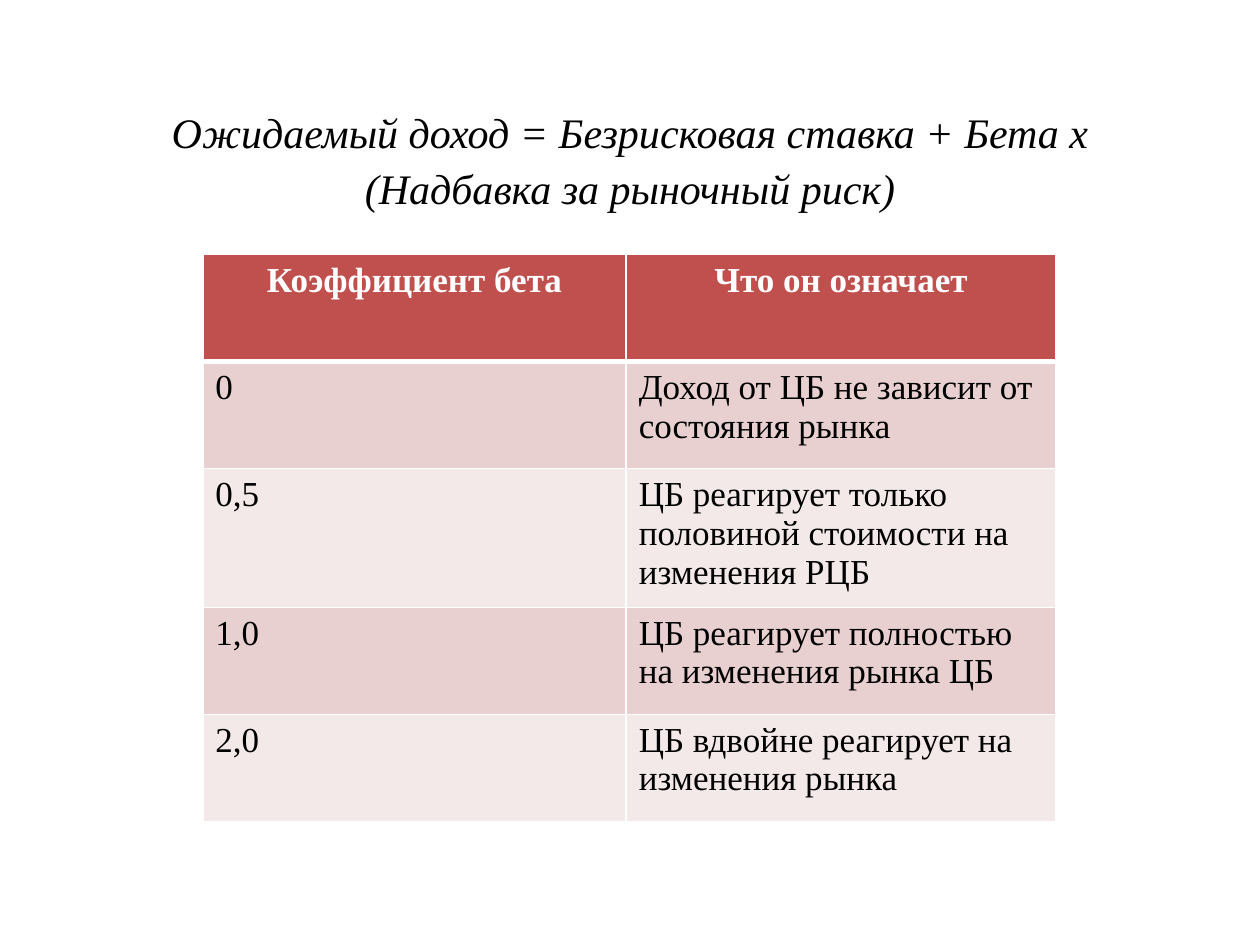
from lxml.etree import SubElement
from pptx import Presentation
from pptx.dml.color import RGBColor
from pptx.enum.text import PP_ALIGN as Align
from pptx.oxml.ns import qn
from pptx.util import Inches, Pt

# Content
FORMULA = "Ожидаемый доход = Безрисковая ставка + Бета х (Надбавка за рыночный риск)"
ROWS = [
    ("Коэффициент бета", "Что он означает"),
    ("0", "Доход от ЦБ не зависит от состояния рынка"),
    ("0,5", "ЦБ реагирует только половиной стоимости на изменения РЦБ"),
    ("1,0", "ЦБ реагирует полностью на изменения рынка ЦБ"),
    ("2,0", "ЦБ вдвойне реагирует на изменения рынка"),
]

# Style and grid
FONT = "Times New Roman"
WHITE, BLACK, HEADER = "FFFFFF", "000000", "C0504D"
BANDS = ("F4E9E9", "E8D0D0")
COLUMN_WIDTHS = (3.36, 3.41)
ROW_HEIGHT = 0.85


def color(value):
    return RGBColor.from_string(value)


def style(para, size, ink, bold=False, italic=False):
    for span in para.runs:
        font = span.font
        font.name, font.size = FONT, Pt(size)
        font.bold, font.italic = bold, italic
        font.color.rgb = color(ink)


def add_borders(cell, bottom):
    properties = cell._tc.get_or_add_tcPr()
    widths = {"a:lnL": 1, "a:lnR": 1, "a:lnT": 1, "a:lnB": bottom}
    for tag, width in widths.items():
        line = SubElement(properties, qn(tag), w=str(Pt(width)))
        fill = SubElement(line, qn("a:solidFill"))
        SubElement(fill, qn("a:srgbClr"), val=WHITE)


def add_formula(page):
    box = page.shapes.add_textbox(Inches(0.5), Inches(0.76), Inches(9), Inches(5.94))
    box.text_frame.word_wrap = True
    para = box.text_frame.paragraphs[0]
    para.text = FORMULA
    para.alignment = Align.CENTER
    para.line_spacing = 1.1
    style(para, 24, BLACK, italic=True)


def add_beta_table(page):
    table = page.shapes.add_table(
        len(ROWS), len(COLUMN_WIDTHS), Inches(1.61), Inches(2.02),
        Inches(sum(COLUMN_WIDTHS)), Inches(ROW_HEIGHT * len(ROWS))).table
    for column, width in zip(table.columns, COLUMN_WIDTHS):
        column.width = Inches(width)
    for r, texts in enumerate(ROWS):
        is_header = r == 0
        table.rows[r].height = Inches(ROW_HEIGHT)
        for c, text in enumerate(texts):
            cell = table.cell(r, c)
            # The header's thick lower edge is shared with the first body row
            add_borders(cell, bottom=3 if is_header else 1)
            cell.fill.solid()
            cell.fill.fore_color.rgb = color(HEADER if is_header else BANDS[r % 2])
            para = cell.text_frame.paragraphs[0]
            para.text = text
            para.alignment = Align.CENTER if is_header else Align.LEFT
            style(para, 20, WHITE if is_header else BLACK, bold=is_header)


def main():
    deck = Presentation()
    deck.slide_width, deck.slide_height = Inches(10), Inches(7.5)
    page = deck.slides.add_slide(deck.slide_layouts[6])
    add_formula(page)
    add_beta_table(page)
    deck.save("out.pptx")


if __name__ == "__main__":
    main()
